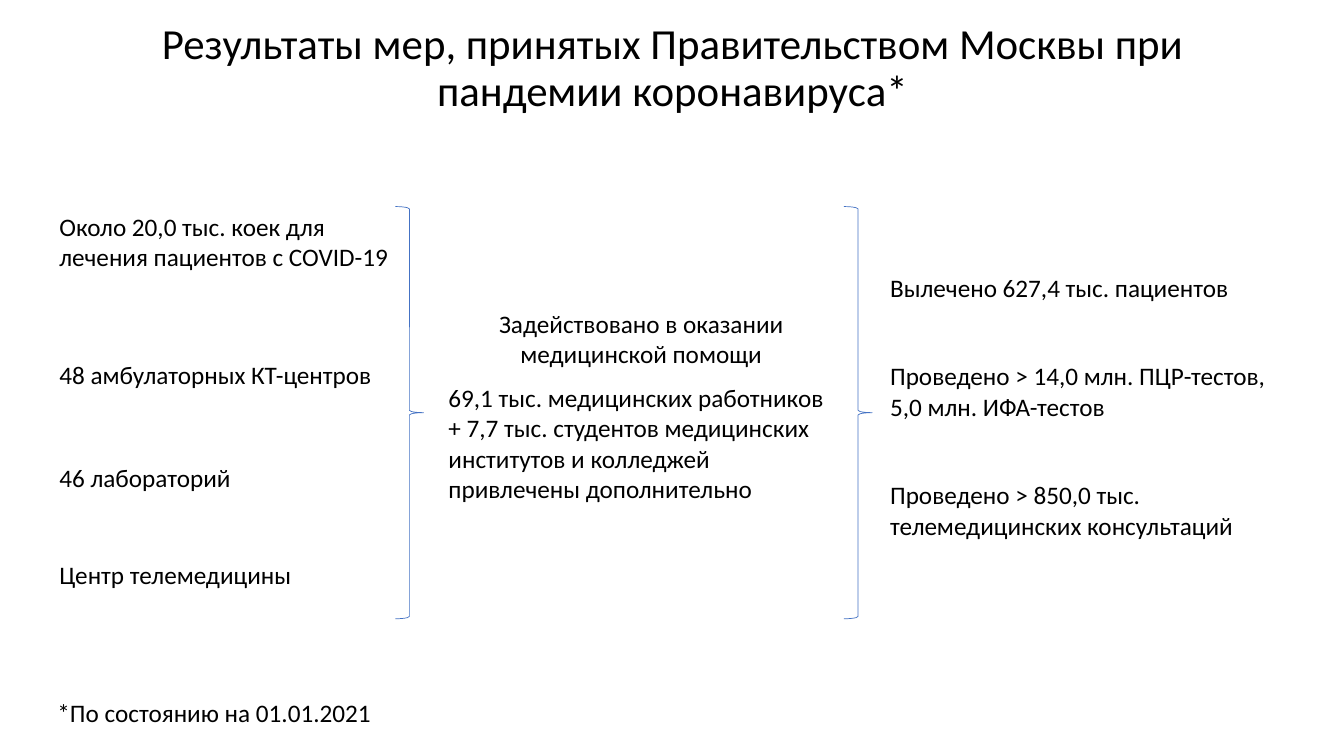
import dataclasses

import pptx
import pptx.dml.color
import pptx.enum.shapes
import pptx.enum.text
import pptx.util


@dataclasses.dataclass(frozen=True)
class Theme:
    font: str = "Calibri"
    text: str = "000000"
    accent: str = "4472C4"
    background: str = "FFFFFF"
    title_size: float = 30.6
    body_size: float = 18
    brace_weight: float = 0.5
    title_spacing: float = 0.9
    heading_gap: float = 9.8


class SlideBuilder:
    """Places styled elements; boxes are left, top, width, height in percent of the slide."""

    def __init__(self, presentation, theme):
        self.theme = theme
        self.width = presentation.slide_width
        self.height = presentation.slide_height
        self.slide = presentation.slides.add_slide(presentation.slide_layouts[5])
        fill = self.slide.background.fill
        fill.solid()
        fill.fore_color.rgb = self.color(theme.background)

    def color(self, code):
        return pptx.dml.color.RGBColor.from_string(code)

    def place(self, left, top, width, height):
        return (round(self.width * left / 100), round(self.height * top / 100),
                round(self.width * width / 100), round(self.height * height / 100))

    def add_run(self, paragraph, text, size):
        run = paragraph.add_run()
        run.text = text
        run.font.name = self.theme.font
        run.font.size = pptx.util.Pt(size)
        run.font.color.rgb = self.color(self.theme.text)

    def title(self, text, box):
        shape = self.slide.shapes.title
        shape.left, shape.top, shape.width, shape.height = self.place(*box)
        frame = shape.text_frame
        frame.auto_size = pptx.enum.text.MSO_AUTO_SIZE.NONE
        frame.vertical_anchor = pptx.enum.text.MSO_ANCHOR.MIDDLE
        paragraph = frame.paragraphs[0]
        paragraph.alignment = pptx.enum.text.PP_ALIGN.CENTER
        paragraph.line_spacing = self.theme.title_spacing
        self.add_run(paragraph, text, self.theme.title_size)

    def text(self, lines, box, heading=False):
        """Adds one paragraph per line; a heading is a centred first line with a gap below."""
        frame = self.slide.shapes.add_textbox(*self.place(*box)).text_frame
        frame.word_wrap = True
        frame.auto_size = pptx.enum.text.MSO_AUTO_SIZE.SHAPE_TO_FIT_TEXT
        for index, line in enumerate(lines):
            paragraph = frame.paragraphs[0] if index == 0 else frame.add_paragraph()
            self.add_run(paragraph, line, self.theme.body_size)
        if heading:
            first = frame.paragraphs[0]
            first.alignment = pptx.enum.text.PP_ALIGN.CENTER
            first.space_after = pptx.util.Pt(self.theme.heading_gap)

    def brace(self, box):
        shape = self.slide.shapes.add_shape(
            pptx.enum.shapes.MSO_SHAPE.RIGHT_BRACE, *self.place(*box))
        shape.shadow.inherit = False
        shape.fill.background()
        shape.line.color.rgb = self.color(self.theme.accent)
        shape.line.width = pptx.util.Pt(self.theme.brace_weight)


ONE_LINE, TWO_LINES = 5.33, 9.47
BRACE_TOP, BRACE_WIDTH, BRACE_HEIGHT = 27.33, 2.1, 54.53
RESOURCES_LEFT, RESOURCES_WIDTH = 3.68, 26.18
RESULTS_LEFT, RESULTS_WIDTH = 65.49, 32.78

RESOURCES = [
    (BRACE_TOP, TWO_LINES, ["Около 20,0 тыс. коек для лечения пациентов с COVID-19"]),
    (46.93, ONE_LINE, ["48 амбулаторных КТ-центров"]),
    (60.53, ONE_LINE, ["46 лабораторий"]),
    (73.33, ONE_LINE, ["Центр телемедицины"]),
]
STAFF = [
    "Задействовано в оказании медицинской помощи",
    "69,1 тыс. медицинских работников",
    "+ 7,7 тыс. студентов медицинских институтов и колледжей привлечены дополнительно",
]
RESULTS = [
    (35.33, ONE_LINE, ["Вылечено 627,4 тыс. пациентов"]),
    (47.07, TWO_LINES, ["Проведено > 14,0 млн. ПЦР-тестов,", "5,0 млн. ИФА-тестов"]),
    (62.8, TWO_LINES, ["Проведено > 850,0 тыс. телемедицинских консультаций"]),
]


def main():
    presentation = pptx.Presentation()
    presentation.slide_width = pptx.util.Inches(13.33)
    presentation.slide_height = pptx.util.Inches(7.5)
    builder = SlideBuilder(presentation, Theme())

    builder.title("Результаты мер, принятых Правительством Москвы при пандемии коронавируса*",
                  (6.9, 1.73, 86.27, 14.8))
    for left, width, items in ((RESOURCES_LEFT, RESOURCES_WIDTH, RESOURCES),
                               (RESULTS_LEFT, RESULTS_WIDTH, RESULTS)):
        for top, height, lines in items:
            builder.text(lines, (left, top, width, height))
    builder.text(STAFF, (32.63, 40.13, 30.16, 27.33), heading=True)
    for left in (29.41, 62.79):
        builder.brace((left, BRACE_TOP, BRACE_WIDTH, BRACE_HEIGHT))
    builder.text(["*По состоянию на 01.01.2021"], (3.53, 91.6, 25.13, ONE_LINE))

    presentation.save("out.pptx")


if __name__ == "__main__":
    main()
